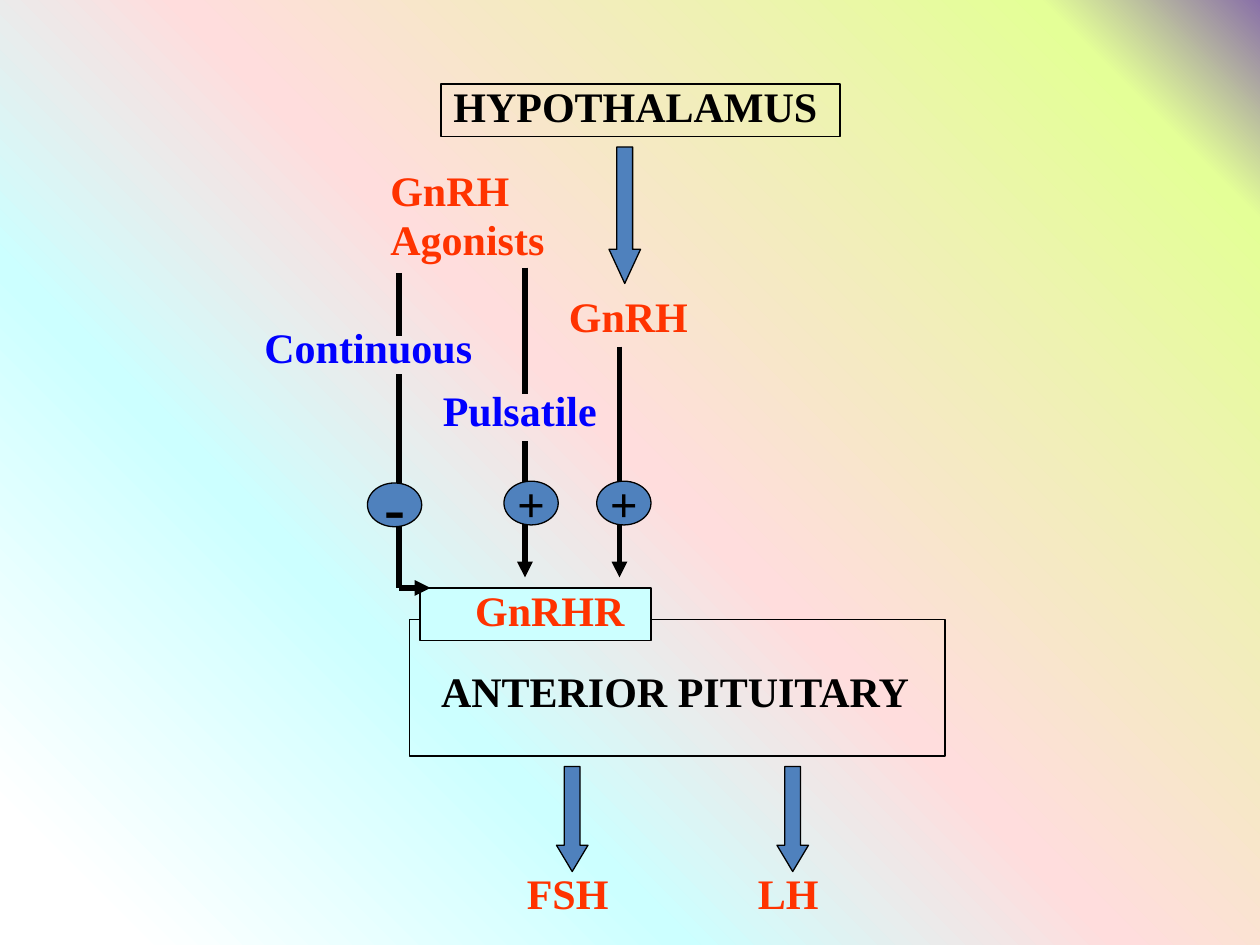
import pptx
import pptx.util
import pptx.dml.color
import pptx.enum.shapes
import pptx.enum.text
import pptx.oxml
import pptx.oxml.ns

Pt = pptx.util.Pt
RGBColor = pptx.dml.color.RGBColor
Shape = pptx.enum.shapes.MSO_SHAPE
Anchor = pptx.enum.text.MSO_ANCHOR

BLACK = RGBColor(0x00, 0x00, 0x00)
RED = RGBColor(0xFF, 0x33, 0x00)
BLUE = RGBColor(0x00, 0x00, 0xFF)
STEEL = RGBColor(0x4F, 0x81, 0xBD)
PALE_CYAN = RGBColor(0xCC, 0xFF, 0xFF)
FONT = "Times New Roman"

# Background stops: percent, colour
BACKGROUND = [
    (6, RGBColor(0xFF, 0xFF, 0xFF)), (31, PALE_CYAN), (51, RGBColor(0xFF, 0xDD, 0xDD)),
    (90, RGBColor(0xE4, 0xFF, 0x97)), (100, RGBColor(0x89, 0x70, 0xA8)),
]
# Boxes: text, (left, top, width, height), fill, text colour, left inset, top inset
BOXES = [
    ("HYPOTHALAMUS", (252, 48, 228, 30), None, BLACK, 7.2, 3.6),
    ("ANTERIOR PITUITARY", (234, 354, 306, 78), None, BLACK, 18, 32),
    ("GnRHR", (240, 336, 132, 30), PALE_CYAN, RED, 31.5, 3.6),
]
# Labels: text, (left, top, width, height), colour
LABELS = [
    ("FSH", (294, 498, 72, 30), RED),
    ("LH", (426, 498, 54, 30), RED),
    ("GnRH", (318, 168, 96, 30), RED),
    ("GnRH\nAgonists", (216, 96, 114, 60), RED),
    ("Pulsatile", (246, 222, 114, 30), BLUE),
    ("Continuous", (144, 186, 138, 30), BLUE),
]
# Block arrows: left, top, height
ARROW_WIDTH = 18
BLOCK_ARROWS = [(348, 84, 78), (318, 438, 60), (444, 438, 60)]
# Pathway lines: start x, start y, end x, end y, arrowhead
PATHWAYS = [
    (354, 198, 354, 330, True),
    (300, 153, 300, 225, False),
    (300, 252, 300, 330, True),
    (228, 156, 228, 192, False),
    (228, 214, 228, 336, False),
    (228, 336, 246, 336, True),
]
# Effect signs: text, left, top, font size
SIGN_SIZE = (31, 25)
SIGNS = [("+", 288, 275, 28), ("+", 341, 275, 28), ("-", 210, 276, 36)]


def add_part(slide, kind, frame, fill=None):
    shape = slide.shapes.add_shape(kind, *map(Pt, frame))
    shape.shadow.inherit = False
    if fill is None:
        shape.fill.background()
    else:
        shape.fill.solid()
        shape.fill.fore_color.rgb = fill
    shape.line.color.rgb = BLACK
    shape.line.width = Pt(0.75)
    return shape


def write_text(shape, text, color, size=24):
    text_frame = shape.text_frame
    text_frame.text = text
    text_frame.word_wrap = True
    text_frame.vertical_anchor = Anchor.TOP
    for index, paragraph in enumerate(text_frame.paragraphs):
        paragraph.alignment = pptx.enum.text.PP_ALIGN.LEFT
        paragraph.line_spacing = 0.8
        if index:
            paragraph.space_before = Pt(5)
        font = paragraph.runs[0].font
        font.name = FONT
        font.size = Pt(size)
        font.bold = True
        font.color.rgb = color
    return text_frame


def set_background(slide):
    fill = slide.background.fill
    fill.gradient()
    stops = "".join(
        f'<a:gs pos="{percent * 1000}"><a:srgbClr val="{color}"/></a:gs>'
        for percent, color in BACKGROUND)
    gradient = pptx.oxml.parse_xml(
        f'<a:gradFill {pptx.oxml.ns.nsdecls("a")} rotWithShape="1"><a:gsLst>{stops}</a:gsLst>'
        '<a:path path="circle"><a:fillToRect t="100000" r="100000"/></a:path></a:gradFill>')
    current = next(slide.background._cSld.iter(pptx.oxml.ns.qn("a:gradFill")))
    current.getparent().replace(current, gradient)


def add_pathway(slide, start_x, start_y, end_x, end_y, arrowhead):
    connector = slide.shapes.add_connector(
        pptx.enum.shapes.MSO_CONNECTOR.STRAIGHT, *map(Pt, (start_x, start_y, end_x, end_y)))
    connector.line.color.rgb = BLACK
    connector.line.width = Pt(3)
    namespace = pptx.oxml.ns.nsdecls("a")
    if arrowhead:
        connector.line._get_or_add_ln().append(
            pptx.oxml.parse_xml(f'<a:tailEnd {namespace} type="triangle"/>'))
    connector._element.spPr.append(pptx.oxml.parse_xml(f"<a:effectLst {namespace}/>"))


def main():
    presentation = pptx.Presentation()
    presentation.slide_width, presentation.slide_height = Pt(720), Pt(540)
    slide = presentation.slides.add_slide(presentation.slide_layouts[6])
    set_background(slide)

    # Gland and receptor boxes
    for text, frame, fill, color, left_inset, top_inset in BOXES:
        text_frame = write_text(add_part(slide, Shape.RECTANGLE, frame, fill), text, color)
        text_frame.margin_left = Pt(left_inset)
        text_frame.margin_top = Pt(top_inset)

    # Hormone and delivery labels
    for text, frame, color in LABELS:
        write_text(slide.shapes.add_textbox(*map(Pt, frame)), text, color)

    # Block arrows
    for left, top, height in BLOCK_ARROWS:
        arrow = add_part(slide, Shape.DOWN_ARROW, (left, top, ARROW_WIDTH, height), STEEL)
        arrow.adjustments[0] = 0.5
        arrow.adjustments[1] = height / ARROW_WIDTH / 4

    # Pathways to the receptor
    for pathway in PATHWAYS:
        add_pathway(slide, *pathway)

    # Stimulation and inhibition signs
    for text, left, top, size in SIGNS:
        sign = add_part(slide, Shape.OVAL, (left, top, *SIGN_SIZE), STEEL)
        text_frame = write_text(sign, text, BLACK, size)
        text_frame.word_wrap = False
        text_frame.vertical_anchor = Anchor.MIDDLE
        text_frame.paragraphs[0].alignment = pptx.enum.text.PP_ALIGN.CENTER
        text_frame.paragraphs[0].line_spacing = 1.0

    presentation.save("out.pptx")


if __name__ == "__main__":
    main()
